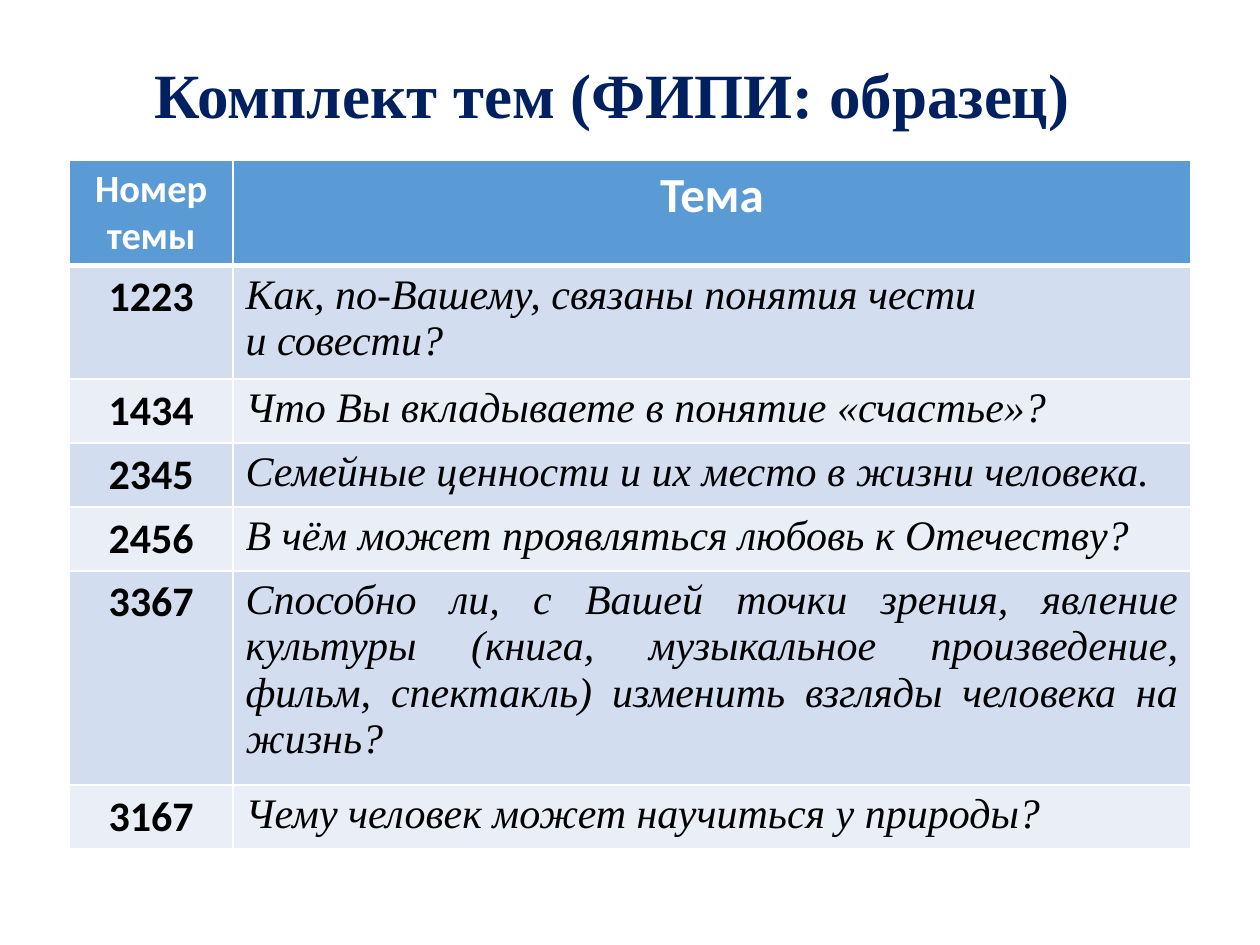
from lxml import etree
from pptx import Presentation
from pptx.dml.color import RGBColor
from pptx.enum.text import MSO_ANCHOR, PP_ALIGN
from pptx.oxml.ns import qn
from pptx.util import Pt

CENTER, JUSTIFY = PP_ALIGN.CENTER, PP_ALIGN.JUSTIFY
MIDDLE = MSO_ANCHOR.MIDDLE

NAVY = RGBColor(0x00, 0x20, 0x60)
BLUE = RGBColor(0x5B, 0x9B, 0xD5)
BAND_DARK = RGBColor(0xD2, 0xDE, 0xEF)
BAND_LIGHT = RGBColor(0xEA, 0xEF, 0xF7)
WHITE = RGBColor(0xFF, 0xFF, 0xFF)
BLACK = RGBColor(0x00, 0x00, 0x00)

SANS, SERIF = "Calibri", "Times New Roman"

HEADINGS = [("Номер темы", 22), ("Тема", 28)]
TOPICS = [
    ("1223", "Как, по-Вашему, связаны понятия чести\nи совести?"),
    ("1434", "Что Вы вкладываете в понятие «счастье»?"),
    ("2345", "Семейные ценности и их место в жизни человека."),
    ("2456", "В чём может проявляться любовь к Отечеству?"),
    ("3367", "Способно ли, с Вашей точки зрения, явление культуры (книга, "
             "музыкальное произведение, фильм, спектакль) изменить взгляды "
             "человека на жизнь?"),
    ("3167", "Чему человек может научиться у природы?"),
]
COLUMN_WIDTHS = [93.6, 547.2]
ROW_HEIGHTS = [60.5, 60.5, 36.5, 36.5, 36.5, 113, 36.5]


def write(frame, text, size, font=SANS, color=BLACK, bold=False, italic=False,
          align=CENTER, spacing=None):
    """Fill a text frame, one paragraph per line of text."""
    frame.text = text
    for paragraph in frame.paragraphs:
        paragraph.alignment = align
        paragraph.line_spacing = spacing
        for run in paragraph.runs:
            run.font.name = font
            run.font.size = Pt(size)
            run.font.bold = bold
            run.font.italic = italic
            run.font.color.rgb = color


def add_borders(cell, top, bottom):
    """Draw white borders; the side borders are one point wide."""
    properties = cell._tc.get_or_add_tcPr()
    for side, width in (("L", 1), ("R", 1), ("T", top), ("B", bottom)):
        line = etree.SubElement(properties, qn(f"a:ln{side}"), w=str(Pt(width)))
        fill = etree.SubElement(line, qn("a:solidFill"))
        etree.SubElement(fill, qn("a:srgbClr"), val=str(WHITE))


class TopicSlide:
    def __init__(self, presentation):
        self.slide = presentation.slides.add_slide(presentation.slide_layouts[6])

    def add_title(self, text, left, top, width, height):
        frame = self.slide.shapes.add_textbox(
            Pt(left), Pt(top), Pt(width), Pt(height)).text_frame
        frame.word_wrap = True
        frame.vertical_anchor = MIDDLE
        write(frame, text, 36, font=SERIF, color=NAVY, bold=True, spacing=0.9)

    def add_topics(self, left, top):
        table = self.slide.shapes.add_table(
            len(ROW_HEIGHTS), len(COLUMN_WIDTHS), Pt(left), Pt(top),
            Pt(sum(COLUMN_WIDTHS)), Pt(sum(ROW_HEIGHTS))).table
        for column, width in zip(table.columns, COLUMN_WIDTHS):
            column.width = Pt(width)
        for row, height in zip(table.rows, ROW_HEIGHTS):
            row.height = Pt(height)

        for column, (heading, size) in enumerate(HEADINGS):
            cell = self.style_cell(table.cell(0, column), BLUE, bottom=3)
            write(cell.text_frame, heading, size, color=WHITE, bold=True)

        for row, (number, topic) in enumerate(TOPICS, start=1):
            band = BAND_DARK if row % 2 else BAND_LIGHT
            top_border = 3 if row == 1 else 1
            number_cell, topic_cell = (
                self.style_cell(cell, band, top=top_border)
                for cell in table.rows[row].cells)
            write(number_cell.text_frame, number, 24, bold=True)
            write(topic_cell.text_frame, topic, 24, font=SERIF, italic=True,
                  align=JUSTIFY)

    def style_cell(self, cell, color, top=1, bottom=1):
        add_borders(cell, top, bottom)
        cell.fill.solid()
        cell.fill.fore_color.rgb = color
        return cell


def main():
    presentation = Presentation()
    presentation.slide_width, presentation.slide_height = Pt(720), Pt(540)
    slide = TopicSlide(presentation)
    slide.add_title("Комплект тем (ФИПИ: образец)", 39.6, 20.9, 620.6, 70.6)
    slide.add_topics(39.6, 91.4)
    presentation.save("out.pptx")


if __name__ == "__main__":
    main()
